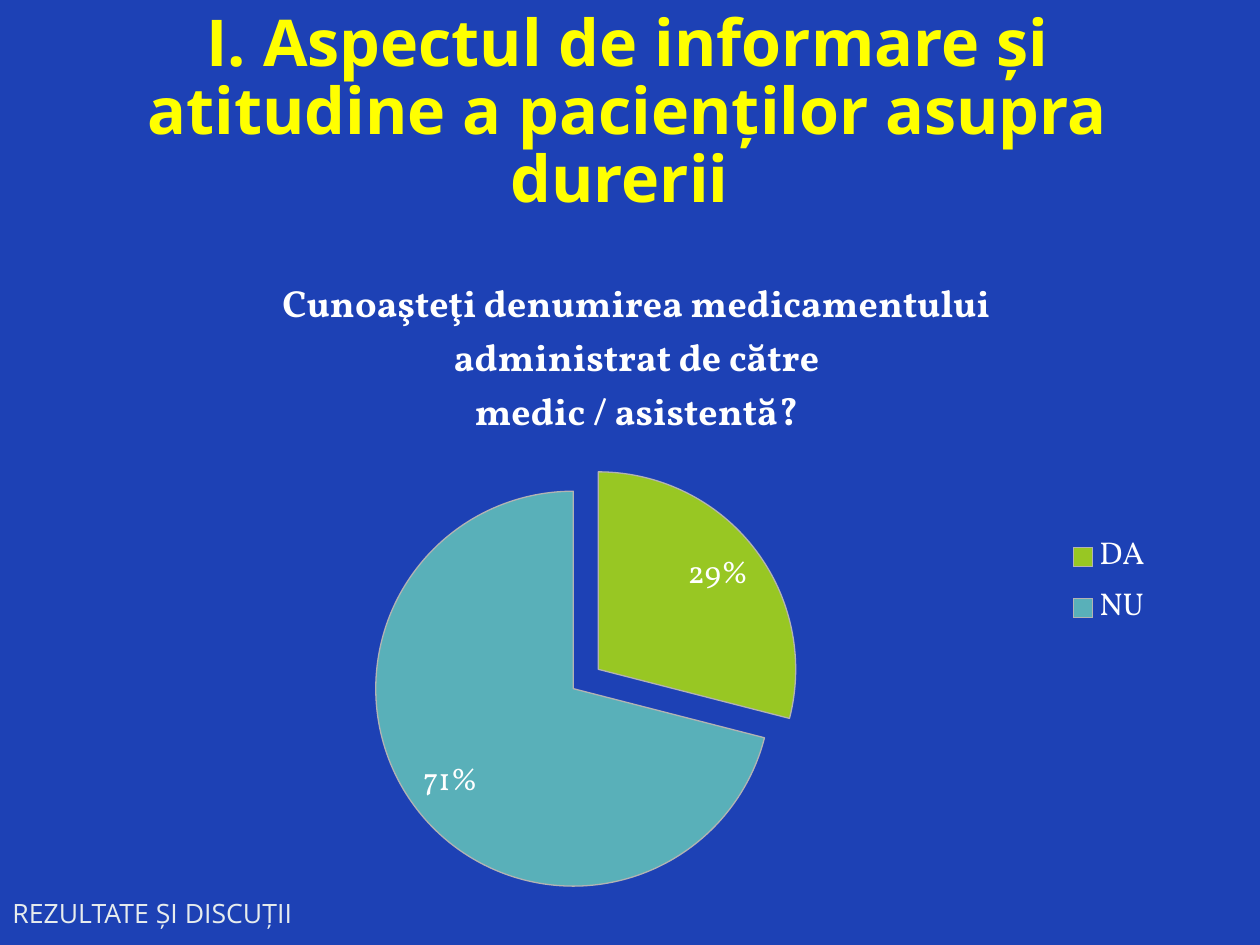
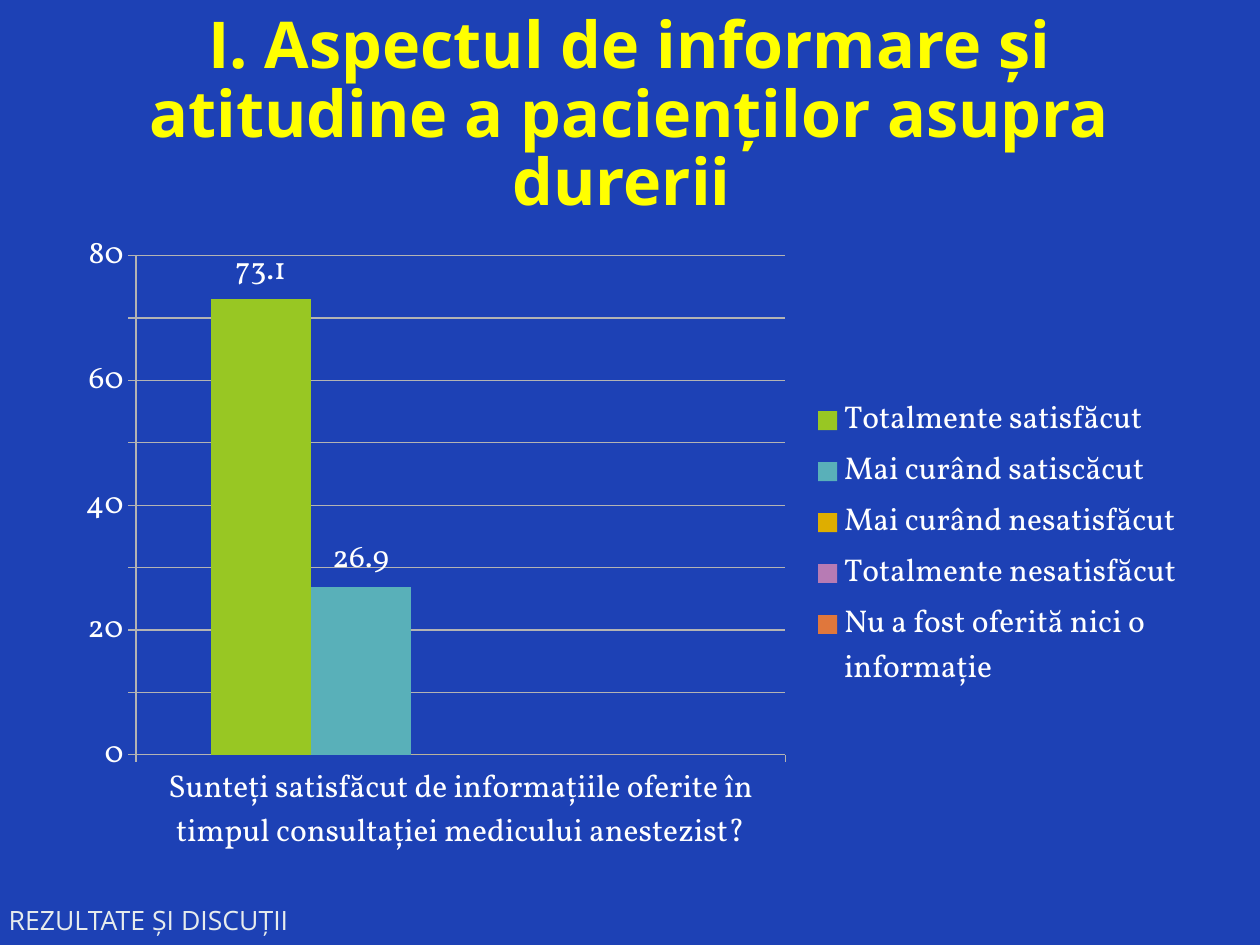
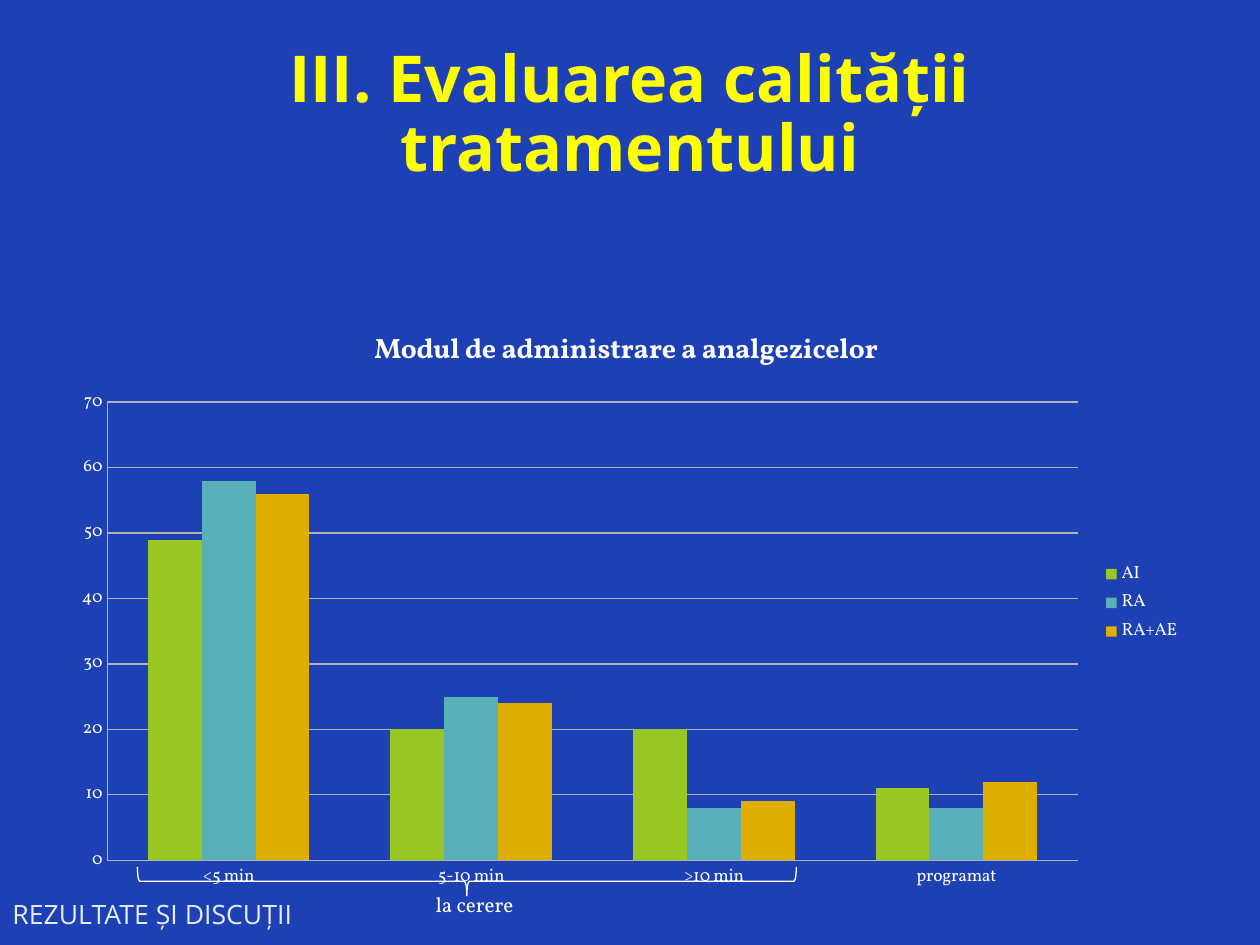
from dataclasses import dataclass
from typing import Optional

from lxml import etree
from pptx import Presentation
from pptx.chart.data import CategoryChartData as ChartData
from pptx.dml.color import RGBColor as RGB
from pptx.enum.chart import XL_CHART_TYPE as Kind
from pptx.enum.chart import XL_LABEL_POSITION as Spot
from pptx.enum.chart import XL_LEGEND_POSITION as Side
from pptx.enum.chart import XL_TICK_MARK as Tick
from pptx.enum.shapes import MSO_SHAPE as Form
from pptx.enum.text import MSO_ANCHOR as Anchor
from pptx.enum.text import PP_ALIGN as Align
from pptx.oxml.ns import qn
from pptx.util import Inches, Pt

COLORS = {
    "back": "1D41B5", "title": "FFFF00", "foot": "E7ECED", "white": "FFFFFF", "grid": "B3B3B3",
    "green": "98C723", "teal": "59B0B9", "gold": "DEAE00", "mauve": "B77BB4", "orange": "E0773C",
}
HUES = ("green", "teal", "gold", "mauve", "orange")
HEAD, BODY = "Open Sans", "Vollkorn"
PAIN = "I. Aspectul de informare și atitudine a pacienților asupra durerii "
Box = tuple[float, float, float, float]


@dataclass
class Graph:
    box: Box
    cats: list[str]
    rows: dict[str, list[float]]
    size: float
    kind: Kind = Kind.COLUMN_CLUSTERED
    title: str = ""
    big: float = 16
    tick: Tick = Tick.NONE
    top: float = 70
    labels: bool = False


@dataclass
class Page:
    title: str
    graph: Graph
    foot: tuple[float, float]
    head: Box = (0.5, 0.3, 9, 1.25)
    note: Optional[str] = None


def color(name: str) -> RGB:
    return RGB.from_string(COLORS[name])


def style(font, size: float, name: str = BODY, hue: str = "white", bold: bool = False) -> None:
    font.name, font.size, font.bold = name, Pt(size), bold
    font.color.rgb = color(hue)


def write(slide, text: str, box: Box, *, size: float, font: str = BODY, hue: str = "white",
          bold: bool = False, align: Align = Align.LEFT, anchor: Anchor = Anchor.MIDDLE,
          space: float = 1.0) -> None:
    frame = slide.shapes.add_textbox(*map(Inches, box)).text_frame
    frame.word_wrap, frame.vertical_anchor = True, anchor
    para = frame.paragraphs[0]
    para.alignment, para.line_spacing = align, space
    run = para.add_run()
    run.text = text
    style(run.font, size, font, hue, bold)


def fill(part, hue: str) -> None:
    part.format.fill.solid()
    part.format.fill.fore_color.rgb = color(hue)


def rule(line) -> None:
    line.color.rgb = color("grid")
    line.width = Pt(0.75)


def set_pie(plot) -> None:
    series = plot.series[0]
    for i, hue in enumerate(HUES[:2]):
        point = series.points[i]
        fill(point, hue)
        rule(point.format.line)
    # Pull the slices apart
    burst = etree.Element(qn("c:explosion"), val="8")
    series._element.find(qn("c:tx")).addnext(burst)
    plot.has_data_labels = True
    marks = plot.data_labels
    marks.show_percentage, marks.show_value = True, False
    marks.number_format, marks.number_format_is_linked = "0%", False
    marks.position = Spot.INSIDE_END


def set_bars(chart, graph: Graph) -> None:
    plot = chart.plots[0]
    plot.gap_width = 150
    for series, hue in zip(plot.series, HUES):
        fill(series, hue)
        if graph.labels and any(series.values):
            marks = series.data_labels
            marks.show_value, marks.position = True, Spot.OUTSIDE_END
            style(marks.font, graph.size)
    for axis in (chart.category_axis, chart.value_axis):
        axis.major_tick_mark, axis.minor_tick_mark = graph.tick, Tick.NONE
        rule(axis.format.line)
    scale = chart.value_axis
    scale.minimum_scale, scale.maximum_scale, scale.major_unit = 0, graph.top, 10
    scale.has_major_gridlines = True
    rule(scale.major_gridlines.format.line)


def add_graph(slide, graph: Graph) -> None:
    data = ChartData()
    data.categories = graph.cats
    for name, vals in graph.rows.items():
        data.add_series(name, vals)
    chart = slide.shapes.add_chart(graph.kind, *map(Inches, graph.box), data).chart
    style(chart.font, graph.size)
    chart.has_legend = True
    chart.legend.position, chart.legend.include_in_layout = Side.RIGHT, False
    chart.has_title = bool(graph.title)
    if graph.title:
        frame = chart.chart_title.text_frame
        frame.text = graph.title
        for para in frame.paragraphs:
            for run in para.runs:
                style(run.font, graph.big, bold=True)
    pie = graph.kind == Kind.PIE
    chart.plots[0].vary_by_categories = pie
    if pie:
        set_pie(chart.plots[0])
    else:
        set_bars(chart, graph)


def add_brace(slide, text: str) -> None:
    brace = slide.shapes.add_shape(Form.RIGHT_BRACE, *map(Inches, (3.59, 4.38, 0.23, 5.23)))
    brace.rotation = 90
    brace.shadow.inherit = False
    brace.fill.background()
    brace.line.color.rgb = color("white")
    brace.line.width = Pt(0.75)
    write(slide, text, (3.36, 7.03, 1.56, 0.31), size=12, anchor=Anchor.TOP)


def add_page(deck, page: Page) -> None:
    slide = deck.slides.add_slide(deck.slide_layouts[6])
    slide.background.fill.solid()
    slide.background.fill.fore_color.rgb = color("back")
    write(slide, page.title, page.head, size=36.9, font=HEAD, hue="title", bold=True,
          align=Align.CENTER, space=0.88)
    add_graph(slide, page.graph)
    write(slide, "REZULTATE ȘI DISCUȚII", (*page.foot, 3.05, 0.47), size=15.2, font=HEAD,
          hue="foot", space=0.8)
    if page.note:
        add_brace(slide, page.note)


PAGES = [
    Page(PAIN, Graph(
        (0.86, 2.02, 8.39, 5.2), ["DA", "NU"], {"Series 1": [29, 71]}, 18, kind=Kind.PIE, big=21.6,
        title="Cunoaşteţi denumirea medicamentului administrat de către\nmedic / asistentă?",
    ), foot=(0, 7.03), head=(0.51, 0.36, 8.95, 1.09)),
    Page(PAIN, Graph(
        (0.5, 1.75, 9, 5.15),
        ["Sunteți satisfăcut de informațiile oferite în timpul consultației medicului anestezist?"],
        {"Totalmente satisfăcut": [73.1], "Mai curând satiscăcut": [26.9],
         "Mai curând nesatisfăcut": [0], "Totalmente nesatisfăcut": [0],
         "Nu a fost oferită nici o informație": [0]},
        18, tick=Tick.OUTSIDE, top=80, labels=True,
    ), foot=(-0.03, 7.09)),
    Page("III. Evaluarea calității tratamentului", Graph(
        (0.47, 2.42, 9, 4.73), ["<5 min", "5-10 min", ">10 min", "programat"],
        {"AI": [49, 20, 20, 11], "RA": [58, 25, 8, 8], "RA+AE": [56, 24, 9, 12]},
        10, title="Modul de administrare a analgezicelor",
    ), foot=(0, 7.04), note="la cerere"),
]


def main() -> None:
    deck = Presentation()
    deck.slide_width, deck.slide_height = Inches(10), Inches(7.5)
    for page in PAGES:
        add_page(deck, page)
    deck.save("out.pptx")


if __name__ == "__main__":
    main()
